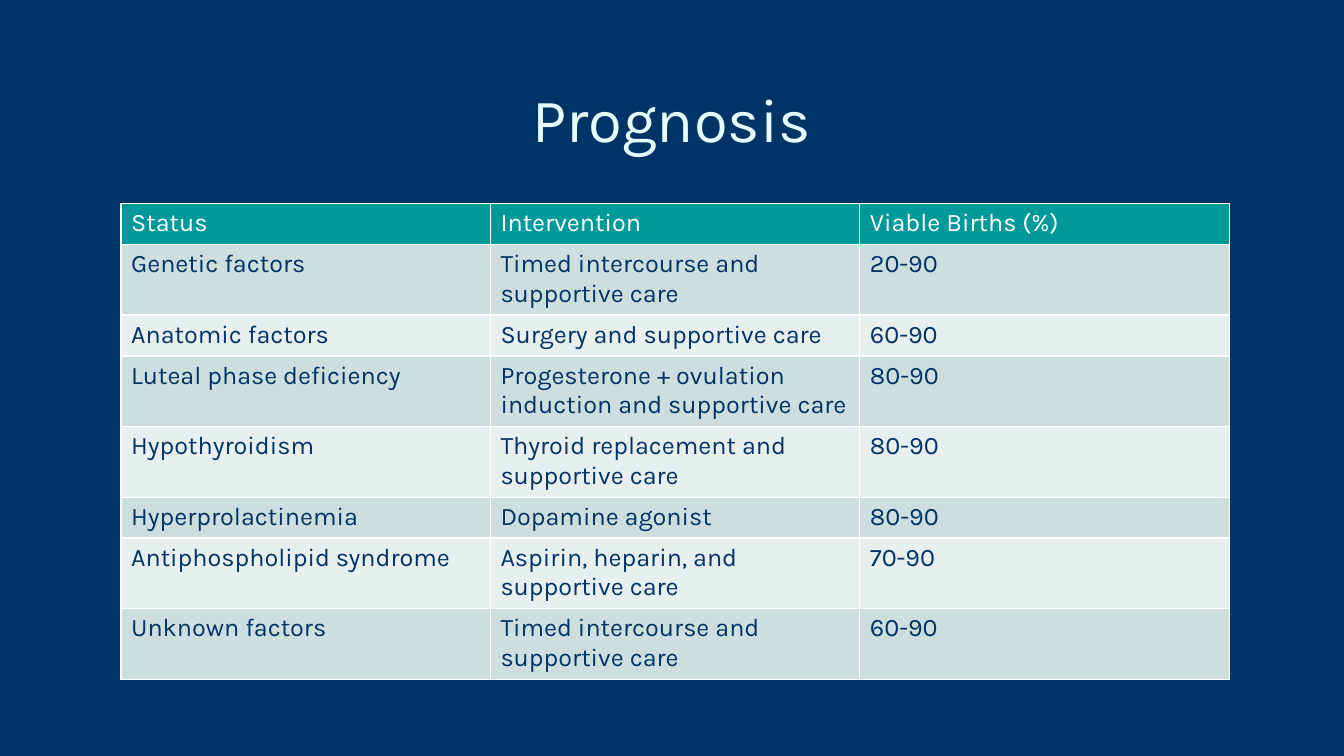
import pptx
import pptx.dml.color
import pptx.enum.text
import pptx.oxml
import pptx.oxml.ns
import pptx.util
from pptx.util import Cm

TITLE = "Prognosis"
HEADER = ("Status", "Intervention", "Viable Births (%)")
OUTCOMES = [
    ("Genetic factors", "Timed intercourse and supportive care", "20-90"),
    ("Anatomic factors", "Surgery and supportive care", "60-90"),
    ("Luteal phase deficiency",
     "Progesterone + ovulation induction and supportive care", "80-90"),
    ("Hypothyroidism", "Thyroid replacement and supportive care", "80-90"),
    ("Hyperprolactinemia", "Dopamine agonist", "80-90"),
    ("Antiphospholipid syndrome", "Aspirin, heparin, and supportive care", "70-90"),
    ("Unknown factors", "Timed intercourse and supportive care", "60-90"),
]

FONT = "Karla"
NAVY, WHITE, ICE, TEAL = "003366", "FFFFFF", "E5FFFF", "009999"
BANDS = ("CCDEDE", "E7EFEF")
COLUMN_WIDTH, ROW_HEIGHT = 9.31, 1.03


def color(hex_code):
    return pptx.dml.color.RGBColor.from_string(hex_code)


def paint(fill, hex_code):
    fill.solid()
    fill.fore_color.rgb = color(hex_code)


def write(frame, text, size=18, ink=NAVY, align=pptx.enum.text.PP_ALIGN.LEFT):
    para = frame.paragraphs[0]
    para.alignment = align
    span = para.add_run()
    span.text = text
    span.font.name = FONT
    span.font.size = pptx.util.Pt(size)
    span.font.bold = False
    span.font.color.rgb = color(ink)


def outline(cell, hex_code, points):
    """Draw all four cell borders; they must precede the fill in the XML."""
    properties = cell._tc.get_or_add_tcPr()
    for position, side in enumerate("LRTB"):
        properties.insert(position, pptx.oxml.parse_xml(
            f'<a:ln{side} {pptx.oxml.ns.nsdecls("a")} w="{pptx.util.Pt(points)}">'
            f'<a:solidFill><a:srgbClr val="{hex_code}"/></a:solidFill></a:ln{side}>'))


def add_title(page):
    box = page.shapes.add_textbox(Cm(1.69), Cm(1.06), Cm(30.48), Cm(3.81))
    frame = box.text_frame
    frame.word_wrap = True
    frame.vertical_anchor = pptx.enum.text.MSO_ANCHOR.MIDDLE
    write(frame, TITLE, size=44, ink=ICE, align=pptx.enum.text.PP_ALIGN.CENTER)


def add_outcome_table(page):
    rows = [HEADER] + OUTCOMES
    table = page.shapes.add_table(
        len(rows), len(HEADER), Cm(3.05), Cm(5.13),
        Cm(COLUMN_WIDTH * len(HEADER)), Cm(ROW_HEIGHT * len(rows))).table
    for column in table.columns:
        column.width = Cm(COLUMN_WIDTH)
    for r, texts in enumerate(rows):
        table.rows[r].height = Cm(ROW_HEIGHT)
        is_header = r == 0
        for c, text in enumerate(texts):
            cell = table.cell(r, c)
            paint(cell.fill, TEAL if is_header else BANDS[(r - 1) % 2])
            outline(cell, WHITE, 1)
            write(cell.text_frame, text, ink=WHITE if is_header else NAVY)


def main():
    deck = pptx.Presentation()
    deck.slide_width, deck.slide_height = Cm(33.87), Cm(19.05)
    page = deck.slides.add_slide(deck.slide_layouts[6])
    paint(page.background.fill, NAVY)
    add_title(page)
    add_outcome_table(page)
    deck.save("out.pptx")


if __name__ == "__main__":
    main()
